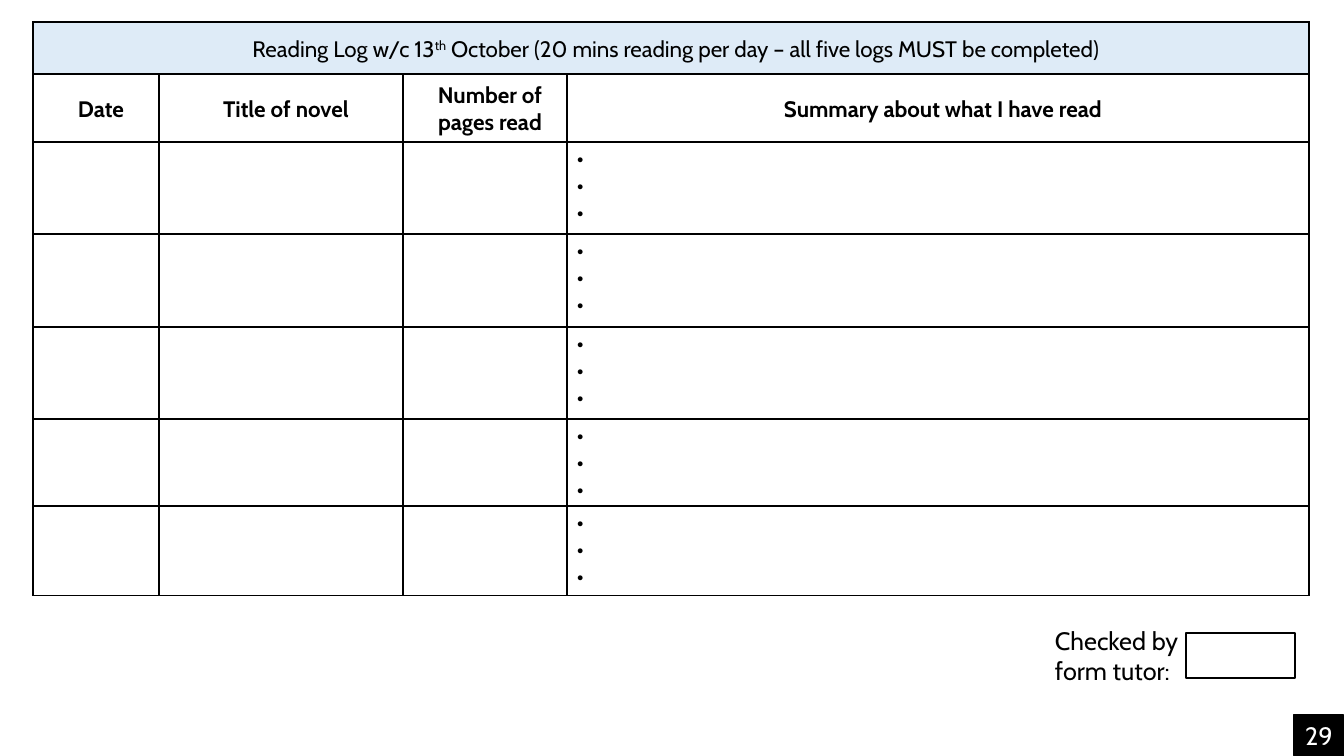
from dataclasses import dataclass

from lxml.etree import SubElement
from pptx import Presentation
from pptx.dml.color import RGBColor
from pptx.enum.shapes import MSO_SHAPE
from pptx.enum.text import MSO_ANCHOR, PP_ALIGN
from pptx.oxml.ns import qn
from pptx.util import Emu, Pt


@dataclass(frozen=True)
class Theme:
    """Colours, font and type sizes of the reading log."""

    ink: RGBColor = RGBColor(0, 0, 0)
    paper: RGBColor = RGBColor(255, 255, 255)
    banner: RGBColor = RGBColor(0xDE, 0xEB, 0xF7)
    font: str = "Cabin"
    log_size: Pt = Pt(16)
    note_size: Pt = Pt(18)
    rule: Pt = Pt(1)
    page_rule: Pt = Pt(0.75)


THEME = Theme()
SLIDE_WIDTH, SLIDE_HEIGHT = 1344, 756
COLUMN_WIDTHS = (126, 244, 164, 742)
ROW_HEIGHTS = (52, 68, 92, 93, 92, 87, 90)
BANNER = (
    ("Reading Log w/c 13", False),
    ("th", True),
    (" October (20 mins reading per day – all five logs MUST be completed)", False),
)
HEADINGS = ("Date", "Title of novel", "Number of pages read", "Summary about what I have read")
POINTS_PER_SUMMARY = 3


def px(length):
    """Turn whole pixels into EMU."""
    return Emu(round(length * 12192000 / SLIDE_WIDTH))


def style(paragraph, size, color=THEME.ink, bold=False, align=PP_ALIGN.LEFT, before=0):
    """Set the type, alignment and space before of a paragraph."""
    paragraph.alignment = align
    paragraph.space_before = Pt(before)
    font = paragraph.font
    font.name, font.size, font.bold = THEME.font, size, bold
    font.color.rgb = color


def set_margins(holder, left=0, top=0):
    """Set the left and top insets and clear the others."""
    holder.margin_left, holder.margin_top = px(left), px(top)
    holder.margin_right = holder.margin_bottom = 0


def rule_cell(cell):
    """Give a cell a plain background and a rule on all four sides."""
    cell.fill.background()
    properties = cell._tc.get_or_add_tcPr()
    for position, side in enumerate(("lnL", "lnR", "lnT", "lnB")):
        border = SubElement(properties, qn(f"a:{side}"), w=str(THEME.rule))
        fill = SubElement(border, qn("a:solidFill"))
        SubElement(fill, qn("a:srgbClr"), val=str(THEME.ink))
        properties.insert(position, border)


def fill_banner(cell):
    """Write the week's title, with its raised ordinal, in the top row."""
    cell.fill.solid()
    cell.fill.fore_color.rgb = THEME.banner
    cell.vertical_anchor = MSO_ANCHOR.MIDDLE
    title = cell.text_frame.paragraphs[0]
    style(title, THEME.log_size, align=PP_ALIGN.CENTER, before=2.3)
    for wording, raised in BANNER:
        part = title.add_run()
        part.text = wording
        if raised:
            part._r.get_or_add_rPr().set("baseline", "30000")


def fill_heading(cell, wording):
    """Write one bold column heading."""
    cell.vertical_anchor = MSO_ANCHOR.MIDDLE
    heading = cell.text_frame.paragraphs[0]
    heading.text = wording
    style(heading, THEME.log_size, bold=True, align=PP_ALIGN.CENTER, before=2.7)


def fill_summary(cell):
    """Write the points that the reader completes."""
    cell.text = "\n".join("•" * POINTS_PER_SUMMARY)
    for index, point in enumerate(cell.text_frame.paragraphs):
        style(point, THEME.log_size, before=0 if index else 2.4)


def add_reading_log(slide, left, top):
    """Place the week's log table with its corner at the given point."""
    log = slide.shapes.add_table(
        len(ROW_HEIGHTS), len(COLUMN_WIDTHS), px(left), px(top),
        px(sum(COLUMN_WIDTHS)), px(sum(ROW_HEIGHTS)),
    ).table
    log.first_row = log.horz_banding = False
    for column, width in zip(log.columns, COLUMN_WIDTHS):
        column.width = px(width)
    for row, height in zip(log.rows, ROW_HEIGHTS):
        row.height = px(height)
    for cell in log.iter_cells():
        set_margins(cell, left=10, top=3)
        rule_cell(cell)
    banner = log.cell(0, 0)
    banner.merge(log.cell(0, len(COLUMN_WIDTHS) - 1))
    fill_banner(banner)
    for column, wording in enumerate(HEADINGS):
        fill_heading(log.cell(1, column), wording)
    for row in range(2, len(ROW_HEIGHTS)):
        fill_summary(log.cell(row, len(COLUMN_WIDTHS) - 1))


def add_box(slide, left, top, width, height, line_width):
    """Place a black-edged rectangle without fill or shadow."""
    box = slide.shapes.add_shape(MSO_SHAPE.RECTANGLE, px(left), px(top), px(width), px(height))
    box.shadow.inherit = False
    box.fill.background()
    box.line.color.rgb = THEME.ink
    box.line.width = line_width
    return box


def add_tutor_check(slide, left, top, width, height):
    """Place the tutor's label with the empty box to its right."""
    box_width, box_height = 109, 45
    add_box(slide, left + width - box_width, top + 9, box_width, box_height, THEME.rule)
    label = slide.shapes.add_textbox(px(left), px(top), px(157), px(height)).text_frame
    label.word_wrap = True
    set_margins(label, left=1, top=1)
    request = label.paragraphs[0]
    request.text = "Checked by form tutor:"
    style(request, THEME.note_size, before=1)


def add_page_number(slide, left, top, width, height):
    """Place the page number on its black corner block."""
    block = add_box(slide, left, top, width, height, THEME.page_rule)
    block.fill.solid()
    block.fill.fore_color.rgb = THEME.ink
    set_margins(block.text_frame)
    block.text_frame.vertical_anchor = MSO_ANCHOR.MIDDLE
    number = block.text_frame.paragraphs[0]
    number.text = "29"
    style(number, THEME.note_size, THEME.paper, align=PP_ALIGN.CENTER)


def main():
    """Build the reading log slide and save it."""
    deck = Presentation()
    deck.slide_width, deck.slide_height = px(SLIDE_WIDTH), px(SLIDE_HEIGHT)
    slide = deck.slides.add_slide(deck.slide_layouts[6])
    slide.background.fill.solid()
    slide.background.fill.fore_color.rgb = THEME.paper
    add_reading_log(slide, 33, 22)
    add_tutor_check(slide, 1054, 624, 241, 62)
    add_page_number(slide, 1294, 715, 50, 41)
    deck.save("out.pptx")


if __name__ == "__main__":
    main()
